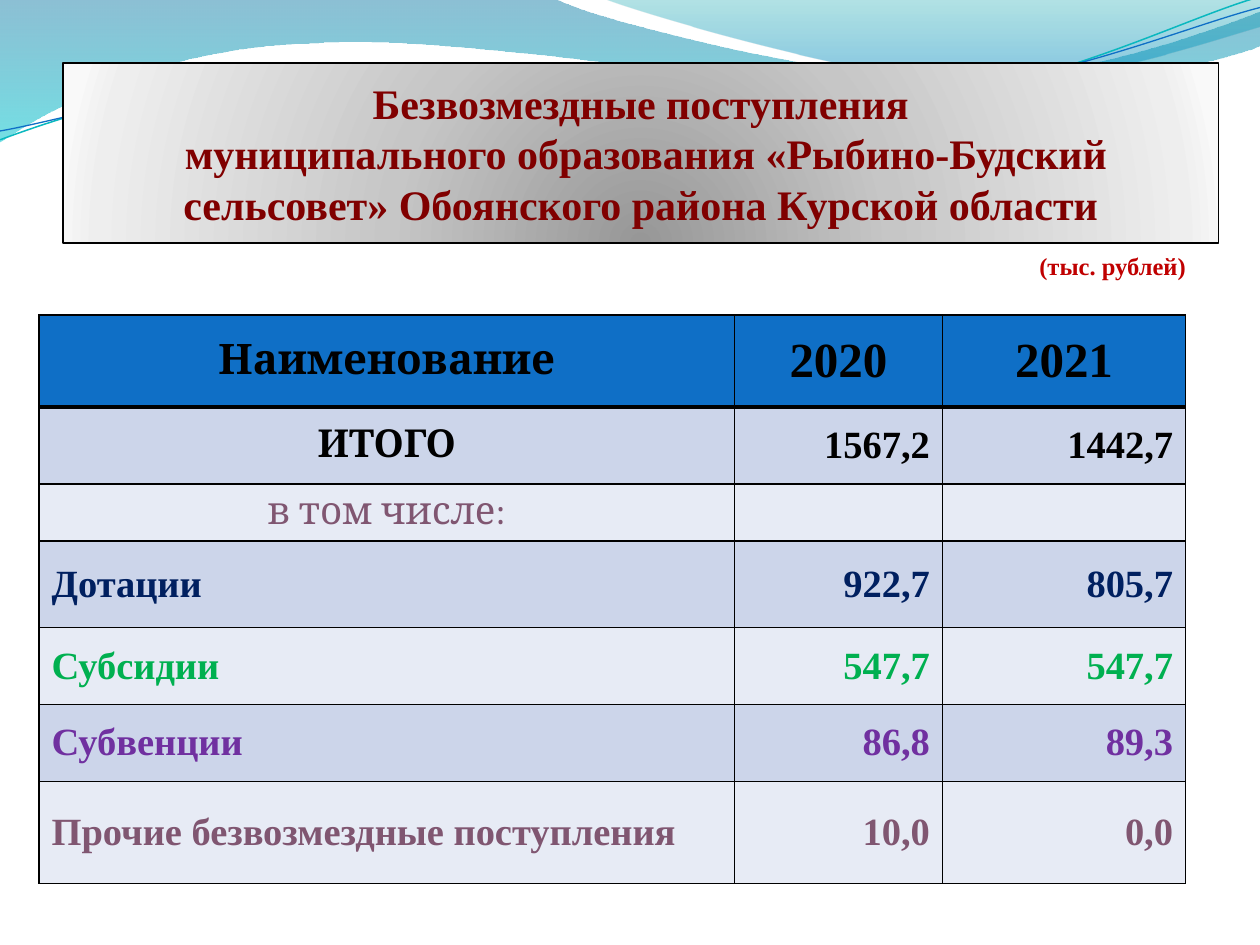
from math import cos, radians, sin

from lxml.etree import SubElement
from pptx import Presentation
from pptx.dml.color import RGBColor
from pptx.enum.shapes import MSO_SHAPE as Shape
from pptx.enum.text import MSO_ANCHOR as Anchor, PP_ALIGN as Align
from pptx.oxml.ns import qn
from pptx.util import Inches, Pt

COLORS = {
    "black": "000000", "header": "0F6FC6", "band": "CCD5EA", "light": "E7EBF5",
    "title": "800000", "unit": "C00000", "mauve": "805671", "navy": "002060",
    "green": "00B050", "violet": "7030A0", "teal line": "0AB8BF",
    "wave top": "0074A1", "wave bottom": "00C6CF",
    "crest top": "00A1A9", "crest bottom": "008BBF",
    "gray core": "979797", "gray mid": "C6C6C6",
    "gray pale": "EEEEEE", "gray edge": "F9F9F9",
}
SERIF, HEADING = "Times New Roman", "Cambria"
TITLE = ("Безвозмездные поступления\v муниципального образования "
         "«Рыбино-Будский сельсовет» Обоянского района Курской области")
UNIT = "(тыс. рублей)"

COLUMN_WIDTHS = [5.52, 1.65, 1.93]
ROWS = [
    (0.73, "black", ["Наименование", "2020", "2021"]),
    (0.61, "black", ["ИТОГО", "1567,2", "1442,7"]),
    (0.45, "mauve", ["в том числе:", "", ""]),
    (0.69, "navy", ["Дотации", "922,7", "805,7"]),
    (0.61, "green", ["Субсидии", "547,7", "547,7"]),
    (0.61, "violet", ["Субвенции", "86,8", "89,3"]),
    (0.81, "mauve", ["Прочие безвозмездные поступления", "10,0", "0,0"]),
]

WAVES = [
    ([(0, "wave top", 45), (100, "wave bottom", 55)],
     [(0, 0), (4.4, -0.01), (4.76, 0.17, 6.64, 0.63, 7.58, 0.63),
      (8.53, 0.63, 9.58, 0.26, 10, 0.09), (10.01, 0.36),
      (9.83, 0.44, 8.7, 0.76, 7.46, 0.75), (6.22, 0.75, 3.82, 0.28, 2.57, 0.34),
      (1.29, 0.36, 0.46, 0.83, -0.01, 1.13), (0, 0)]),
    ([(0, "crest top", 30), (80, "crest bottom", 45)],
     [(4.79, -0.01), (5.09, 0.11, 6.82, 0.62, 7.69, 0.65),
      (8.56, 0.69, 9.61, 0.32, 10, 0.21), (10, 0), (4.79, -0.01)]),
]
TILT = -2.7
STRANDS = [
    ("teal line", 0.85, (4.99, 0.58),
     [(0, 1.11), (0.48, 0.93, 1.58, 0.57, 2.77, 0.52),
      (3.95, 0.47, 5.93, 0.89, 7.13, 0.8), (8.33, 0.71, 9.38, 0.15, 9.98, -0.02)]),
    ("header", 0.75, (5, 0.59),
     [(0, 1.04), (0.47, 0.96, 1.64, 0.61, 2.83, 0.56),
      (4.03, 0.51, 5.97, 0.84, 7.17, 0.75), (8.36, 0.67, 9.41, 0.21, 10, 0.06)]),
]
TITLE_STOPS = [(0, "gray core", 100), (43, "gray mid", 100),
               (93, "gray pale", 100), (100, "gray edge", 100)]


def rgb(name):
    return RGBColor.from_string(COLORS[name])


def add_node(parent, tag, **attributes):
    return SubElement(parent, qn(tag), {key: str(value) for key, value in attributes.items()})


def add_color(parent, name, opacity=100):
    color = add_node(parent, "a:srgbClr", val=COLORS[name])
    if opacity < 100:
        add_node(color, "a:alpha", val=opacity * 1000)


def fill_gradient(shape, stops, radial=False):
    shape.fill.gradient()
    gradient = shape.element.spPr.find(qn("a:gradFill"))
    for child in list(gradient):
        gradient.remove(child)
    stop_list = add_node(gradient, "a:gsLst")
    for position, name, opacity in stops:
        add_color(add_node(stop_list, "a:gs", pos=position * 1000), name, opacity)
    if radial:
        circle = add_node(gradient, "a:path", path="circle")
        add_node(circle, "a:fillToRect", l=50000, t=130000, r=50000, b=-30000)
    else:
        add_node(gradient, "a:lin", ang=90 * 60000, scaled=0)


def pairs(segment):
    return list(zip(segment[::2], segment[1::2]))


def turn(segments, center, degrees):
    c, s = cos(radians(degrees)), sin(radians(degrees))
    turned = []
    for segment in segments:
        offsets = [(x - center[0], y - center[1]) for x, y in pairs(segment)]
        turned.append([value for dx, dy in offsets
                       for value in (center[0] + dx * c - dy * s, center[1] + dx * s + dy * c)])
    return turned


def add_outline(slide, segments, close):
    anchors = [(Inches(segment[-2]), Inches(segment[-1])) for segment in segments]
    builder = slide.shapes.build_freeform(*anchors[0])
    builder.add_line_segments(anchors[1:], close=close)
    shape = builder.convert_to_shape()
    shape.shadow.inherit = False
    steps = list(shape.element.spPr.find(".//" + qn("a:path")))
    for step, segment in zip(steps, segments):
        if len(segment) == 6:
            step.tag = qn("a:cubicBezTo")
            step.remove(step[0])
            for x, y in pairs(segment):
                add_node(step, "a:pt", x=Inches(x) - shape.left, y=Inches(y) - shape.top)
    return shape


def write(frame, text, size, color, font=SERIF, bold=True, align=Align.LEFT):
    para = frame.paragraphs[0]
    para.text = text
    para.alignment = align
    para.font.size = Pt(size)
    para.font.name = font
    para.font.bold = bold
    para.font.color.rgb = rgb(color)


def set_borders(cell, widths):
    properties = cell._tc.get_or_add_tcPr()
    for side, width in zip("LRTB", widths):
        line = add_node(properties, f"a:ln{side}", w=Pt(width))
        add_color(add_node(line, "a:solidFill"), "black")


def add_backdrop(slide):
    for stops, segments in WAVES:
        wave = add_outline(slide, segments, True)
        fill_gradient(wave, stops)
        wave.line.fill.background()
    for color, width, center, segments in STRANDS:
        strand = add_outline(slide, turn(segments, center, -TILT), False)
        strand.rotation = TILT
        strand.fill.background()
        strand.line.color.rgb = rgb(color)
        strand.line.width = Pt(width)


def add_income_table(slide):
    heights = [height for height, _, _ in ROWS]
    table = slide.shapes.add_table(
        len(ROWS), len(COLUMN_WIDTHS), Inches(0.31), Inches(2.5),
        Inches(sum(COLUMN_WIDTHS)), Inches(sum(heights))).table
    table.horz_banding = False
    for column, width in zip(table.columns, COLUMN_WIDTHS):
        column.width = Inches(width)
    for r, (height, color, texts) in enumerate(ROWS):
        table.rows[r].height = Inches(height)
        for c, text in enumerate(texts):
            cell = table.cell(r, c)
            cell.vertical_anchor = Anchor.MIDDLE
            set_borders(cell, (1, 1, 3 if r == 1 else 1, 3 if r == 0 else 1))
            cell.fill.solid()
            cell.fill.fore_color.rgb = rgb("header" if r == 0 else "band" if r % 2 else "light")
            if not text:
                continue
            summary = c == 0 and r < 3
            size = 22 if r else 24 if c == 0 else 28
            align = Align.CENTER if r == 0 or summary else Align.RIGHT if c else Align.LEFT
            write(cell.text_frame, text, size, color,
                  HEADING if summary else SERIF, r != 2, align)


def add_title(slide):
    box = slide.shapes.add_shape(Shape.RECTANGLE, Inches(0.5), Inches(0.5),
                                 Inches(9.17), Inches(1.43))
    fill_gradient(box, TITLE_STOPS, radial=True)
    box.line.color.rgb = rgb("black")
    box.line.width = Pt(0.75)
    box.shadow.inherit = False
    box.text_frame.word_wrap = True
    box.text_frame.vertical_anchor = Anchor.MIDDLE
    write(box.text_frame, TITLE, 24, "title", align=Align.CENTER)


def main():
    deck = Presentation()
    deck.slide_width, deck.slide_height = Inches(10), Inches(7.5)
    slide = deck.slides.add_slide(deck.slide_layouts[6])
    add_backdrop(slide)
    add_income_table(slide)
    add_title(slide)
    unit = slide.shapes.add_textbox(Inches(8.15), Inches(1.94), Inches(1.42), Inches(0.33))
    unit.text_frame.word_wrap = True
    write(unit.text_frame, UNIT, 14, "unit")
    deck.save("out.pptx")


if __name__ == "__main__":
    main()
